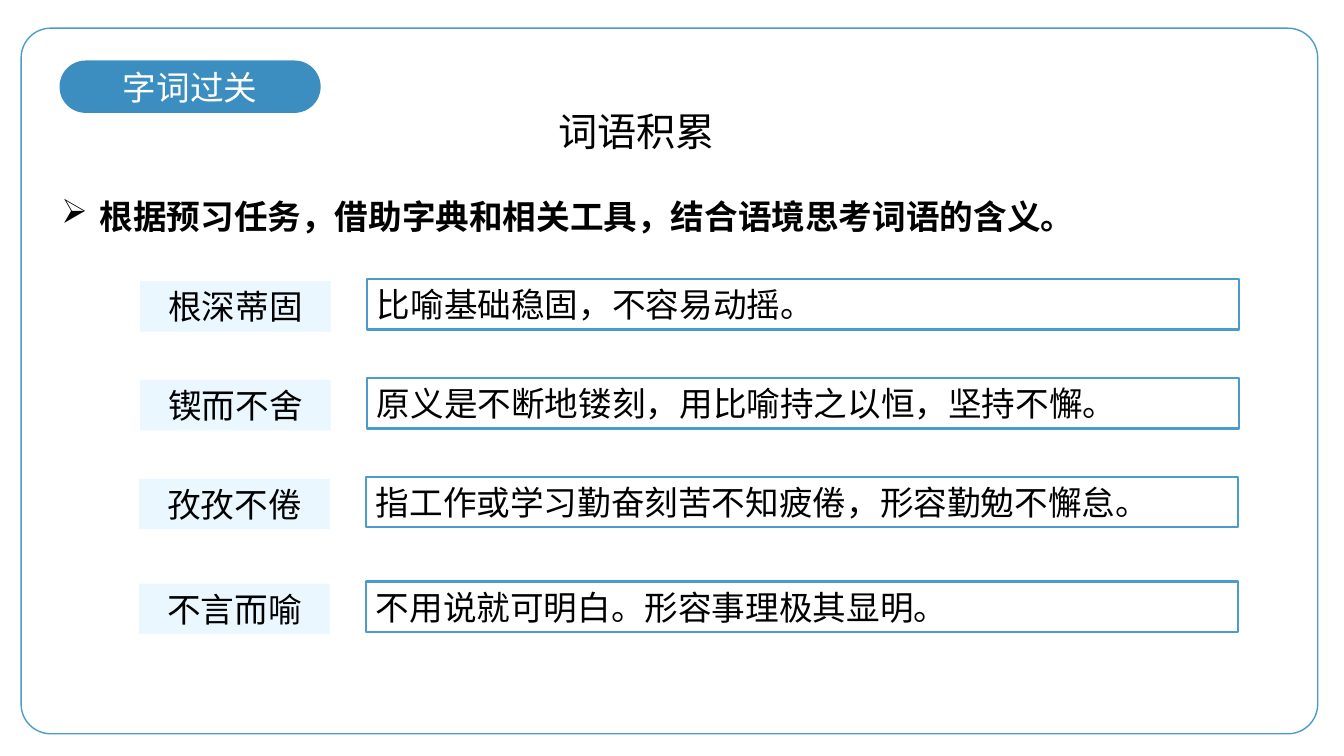
from lxml.etree import SubElement
from pptx import Presentation
from pptx.dml.color import RGBColor
from pptx.enum.shapes import MSO_SHAPE
from pptx.enum.text import MSO_ANCHOR, PP_ALIGN
from pptx.oxml.ns import qn
from pptx.util import Inches, Pt

BLUE = RGBColor(0x3C, 0x8E, 0xC0)
OUTLINE = RGBColor(0x4B, 0x9B, 0xCC)
PALE = RGBColor(0xEB, 0xF7, 0xFF)
WHITE = RGBColor(0xFF, 0xFF, 0xFF)
BLACK = RGBColor(0x00, 0x00, 0x00)
CJK = "Noto Sans CJK SC"

WIDTH, HEIGHT = 13.33, 7.5
ROW_HEIGHT = 0.5
WORD_WIDTH, MEANING_OFFSET, MEANING_WIDTH = 1.89, 2.25, 8.65
# Left edge and top of each entry, then the word and its meaning
ENTRIES = [
    (1.39, 2.77, "根深蒂固", "比喻基础稳固，不容易动摇。"),
    (1.39, 3.75, "锲而不舍", "原义是不断地镂刻，用比喻持之以恒，坚持不懈。"),
    (1.38, 4.73, "孜孜不倦", "指工作或学习勤奋刻苦不知疲倦，形容勤勉不懈怠。"),
    (1.38, 5.77, "不言而喻", "不用说就可明白。形容事理极其显明。"),
]


def write(holder, text, align, size=24, name=CJK, color=BLACK,
          bold=False, anchor=MSO_ANCHOR.TOP):
    frame = holder.text_frame
    frame.word_wrap = True
    frame.vertical_anchor = anchor
    paragraph = frame.paragraphs[0]
    paragraph.text = text
    paragraph.alignment = align
    font = paragraph.font
    font.size, font.name, font.bold = Pt(size), name, bold
    font.color.rgb = color
    return paragraph


def add_box(slide, preset, box, fill=None, line=None, line_width=1.0):
    shape = slide.shapes.add_shape(preset, *map(Inches, box))
    shape.shadow.inherit = False
    if fill is None:
        shape.fill.background()
    else:
        shape.fill.solid()
        shape.fill.fore_color.rgb = fill
    if line is None:
        shape.line.fill.background()
    else:
        shape.line.color.rgb = line
        shape.line.width = Pt(line_width)
    return shape


def add_frame(slide, box):
    """Section label and the rounded border around the whole slide."""
    left, top, _, _ = box
    label = add_box(slide, MSO_SHAPE.ROUNDED_RECTANGLE,
                    (left + 0.38, top + 0.32, 2.59, 0.52), BLUE)
    label.adjustments[0] = 0.5
    write(label, "字词过关", PP_ALIGN.CENTER, name="Calibri", color=WHITE,
          anchor=MSO_ANCHOR.MIDDLE)
    border = add_box(slide, MSO_SHAPE.ROUNDED_RECTANGLE, box, line=OUTLINE)
    border.adjustments[0] = 0.042


def add_title(slide, box):
    title = slide.shapes.add_textbox(*map(Inches, box))
    write(title, "词语积累", PP_ALIGN.JUSTIFY, size=28, name="Arial")


def add_task(slide, box):
    task = slide.shapes.add_textbox(*map(Inches, box))
    paragraph = task.text_frame.paragraphs[0]
    properties = paragraph._p.get_or_add_pPr()
    properties.set("marL", str(Inches(0.38)))
    properties.set("indent", str(-Inches(0.38)))
    SubElement(properties, qn("a:buFont"), typeface="Wingdings")
    SubElement(properties, qn("a:buChar"), char="Ø")
    write(task, "根据预习任务，借助字典和相关工具，结合语境思考词语的含义。",
          PP_ALIGN.JUSTIFY, bold=True)


def add_entry(slide, left, top, word, meaning):
    word_box = add_box(slide, MSO_SHAPE.RECTANGLE,
                       (left, top + 0.02, WORD_WIDTH, ROW_HEIGHT), PALE)
    write(word_box, word, PP_ALIGN.CENTER)
    meaning_box = add_box(
        slide, MSO_SHAPE.RECTANGLE,
        (left + MEANING_OFFSET, top, MEANING_WIDTH, ROW_HEIGHT),
        WHITE, OUTLINE, 1.75)
    write(meaning_box, meaning, PP_ALIGN.LEFT)


def main():
    deck = Presentation()
    deck.slide_width, deck.slide_height = Inches(WIDTH), Inches(HEIGHT)
    slide = deck.slides.add_slide(deck.slide_layouts[6])
    add_frame(slide, (0.21, 0.28, 12.86, 7))
    add_title(slide, (5.44, 1.02, 2.42, 0.57))
    add_task(slide, (0.51, 1.89, 12.47, 0.5))
    for entry in ENTRIES:
        add_entry(slide, *entry)
    deck.save("out.pptx")


if __name__ == "__main__":
    main()
